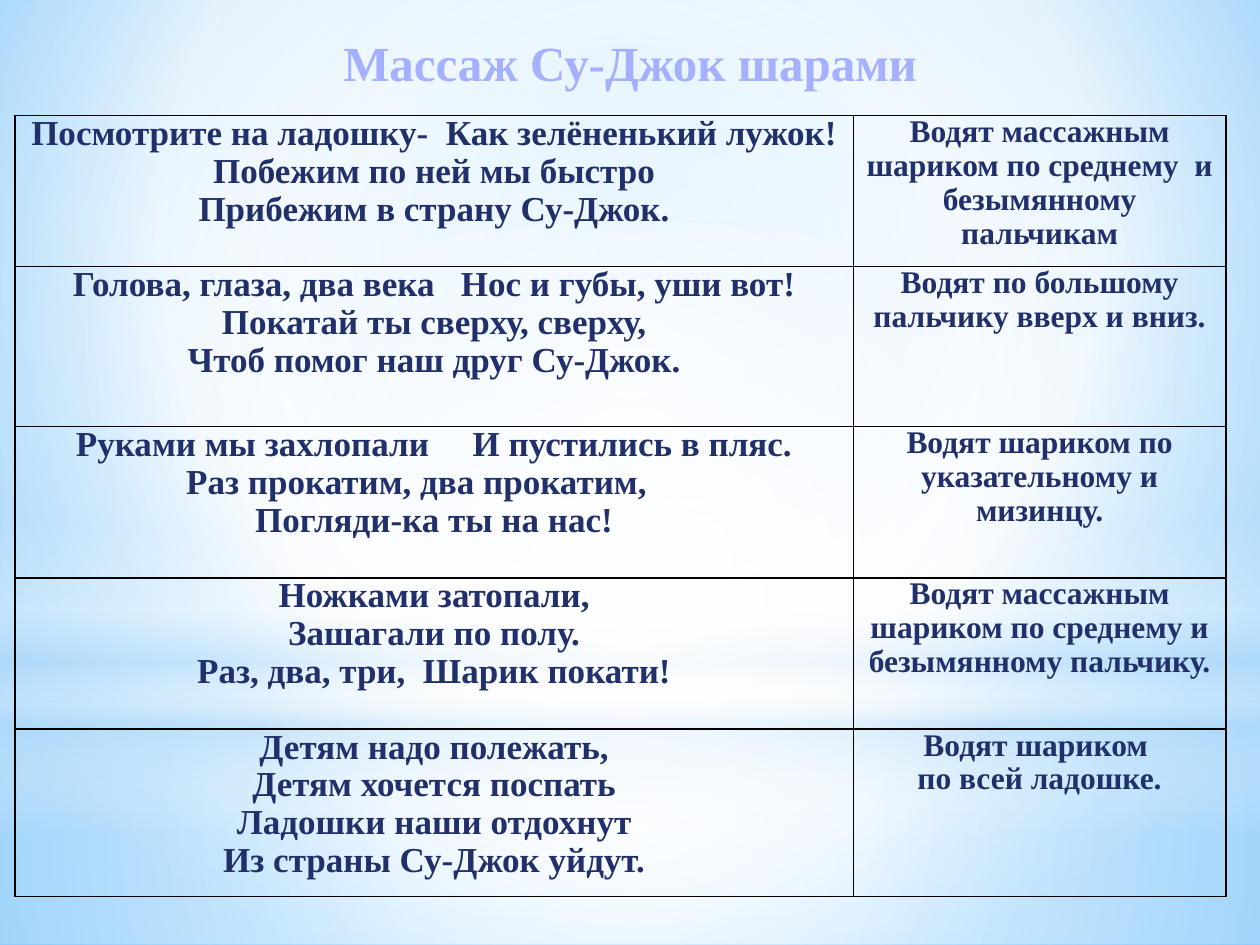
from dataclasses import dataclass

from lxml import etree
from pptx import Presentation
from pptx import util as u
from pptx.dml.color import RGBColor
from pptx.enum import shapes, text
from pptx.oxml import ns


@dataclass(frozen=True)
class Theme:
    """Colours, font and type sizes of the deck."""
    font: str = "Times New Roman"
    title: str = "A5B0FF"
    ink: str = "21306A"
    rule: str = "000000"
    white: str = "FFFFFF"
    mist: str = "B4DCFA"
    sky: str = "9ED5FF"
    deep: str = "5BB9FF"
    title_size: int = 28
    verse_size: int = 20
    action_size: int = 18


THEME = Theme()
CENTRE = (50, 50, 50, 50)
ROWS = [
    (["Посмотрите на ладошку-  Как зелёненький лужок!",
      "Побежим по ней мы быстро",
      "Прибежим в страну Су-Джок."],
     ["Водят массажным шариком по среднему  и безымянному пальчикам"]),
    (["Голова, глаза, два века   Нос и губы, уши вот!",
      "Покатай ты сверху, сверху,",
      "Чтоб помог наш друг Су-Джок."],
     ["Водят по большому пальчику вверх и вниз."]),
    (["Руками мы захлопали     И пустились в пляс.",
      "Раз прокатим, два прокатим,    ",
      "Погляди-ка ты на нас!"],
     ["Водят шариком по указательному и мизинцу."]),
    (["Ножками затопали,",
      "Зашагали по полу.",
      "Раз, два, три,  Шарик покати!"],
     ["Водят массажным шариком по среднему и безымянному пальчику."]),
    (["Детям надо полежать,",
      "Детям хочется поспать",
      "Ладошки наши отдохнут",
      "Из страны Су-Джок уйдут."],
     ["Водят шариком ",
      "по всей ладошке."]),
]


def add_node(parent, tag, **values):
    """Append a DrawingML element with the given attributes."""
    node = etree.SubElement(parent, ns.qn(tag))
    for name, value in values.items():
        node.set(name, str(value))
    return node


def set_gradient(properties, stops, focus=None):
    """Swap a solid fill for a circular gradient, or a vertical one without focus."""
    solid = properties.find(ns.qn("a:solidFill"))
    fill = etree.Element(ns.qn("a:gradFill"), rotWithShape="1")
    stop_list = add_node(fill, "a:gsLst")
    for position, colour, opacity in stops:
        stop = add_node(stop_list, "a:gs", pos=position * 1000)
        shade = add_node(stop, "a:srgbClr", val=colour)
        if opacity < 100:
            add_node(shade, "a:alpha", val=opacity * 1000)
    if focus:
        circle = add_node(fill, "a:path", path="circle")
        edges = {side: edge * 1000 for side, edge in zip("ltrb", focus)}
        add_node(circle, "a:fillToRect", **edges)
    else:
        add_node(fill, "a:lin", ang=90 * 60000, scaled=0)
    properties.replace(solid, fill)


def write_lines(frame, lines, size, colour, spacing):
    """Fill a text frame with centred bold paragraphs."""
    for index, line in enumerate(lines):
        para = frame.paragraphs[0] if index == 0 else frame.add_paragraph()
        para.alignment = text.PP_ALIGN.CENTER
        para.line_spacing = spacing
        span = para.add_run()
        span.text = line
        look = {"name": THEME.font, "size": u.Pt(size), "bold": True}
        for name, value in look.items():
            setattr(span.font, name, value)
        span.font.color.rgb = RGBColor.from_string(colour)


def add_glow(page, kind, box, stops, focus=None):
    """Place one translucent gradient shape in the box."""
    glow = page.shapes.add_shape(kind, *map(u.Pt, box))
    glow.shadow.inherit = False
    glow.line.fill.background()
    glow.fill.solid()
    set_gradient(glow._element.spPr, stops, focus)


def add_backdrop(page, box):
    """Paint the sky background and its layers of light."""
    left, top, width, height = box
    white, mist = THEME.white, THEME.mist
    page.background.fill.solid()
    set_gradient(page._element.find(".//" + ns.qn("p:bgPr")),
                 [(0, THEME.sky, 100), (60, white, 100), (100, THEME.deep, 100)],
                 (20, 10, 20, 60))
    rectangle, oval = shapes.MSO_SHAPE.RECTANGLE, shapes.MSO_SHAPE.OVAL
    horizon = 402
    add_glow(page, rectangle, (left, top + horizon, width, height - horizon),
             [(0, white, 91), (37, white, 76), (100, mist, 79)], CENTRE)
    add_glow(page, rectangle, (left, top, width, horizon),
             [(0, white, 89), (48, white, 62), (100, mist, 79)], CENTRE)
    add_glow(page, rectangle, (left, top + 297, width, 180),
             [(0, white, 0), (29, white, 30), (45, mist, 40),
              (55, white, 26), (65, mist, 60), (100, white, 0)])
    add_glow(page, oval, (left, top + 126, width, horizon),
             [(0, white, 100), (56, white, 0)], CENTRE)


def add_title(page, box):
    """Place the slide title in the box."""
    frame = page.shapes.add_textbox(*map(u.Pt, box)).text_frame
    frame.word_wrap = True
    write_lines(frame, ["Массаж Су-Джок шарами"], THEME.title_size, THEME.title, 1.0)


def add_borders(cell):
    """Draw a thin rule on all four sides of a cell."""
    properties = cell._tc.get_or_add_tcPr()
    for index, side in enumerate("LRTB"):
        rule = add_node(properties, "a:ln" + side, w=u.Pt(1))
        add_node(add_node(rule, "a:solidFill"), "a:srgbClr", val=THEME.rule)
        properties.insert(index, rule)


def add_verses(page, box):
    """Place the table of verses and matching ball movements in the box."""
    left, top, width, height = box
    table = page.shapes.add_table(len(ROWS), 2, *map(u.Pt, box)).table
    table.first_row = table.horz_banding = False
    verse_width = 479
    for column, span in zip(table.columns, (verse_width, width - verse_width)):
        column.width = u.Pt(span)
    row_heights = [86.4, 91.4, 86.4, 86.4]
    row_heights.append(height - sum(row_heights))
    margins = {"margin_left": 5, "margin_right": 5, "margin_top": 0, "margin_bottom": 0}
    sizes = (THEME.verse_size, THEME.action_size)
    for row, row_height, contents in zip(table.rows, row_heights, ROWS):
        row.height = u.Pt(row_height)
        for cell, lines, size in zip(row.cells, contents, sizes):
            for name, value in margins.items():
                setattr(cell, name, u.Pt(value))
            cell.fill.background()
            add_borders(cell)
            write_lines(cell.text_frame, lines, size, THEME.ink, 0.97)


def main():
    """Build and save the deck."""
    deck = Presentation()
    deck.slide_width, deck.slide_height = u.Pt(720), u.Pt(540)
    page = deck.slides.add_slide(deck.slide_layouts[6])
    add_backdrop(page, (0, 0, 720, 540))
    add_title(page, (20, 15, 680, 80))
    add_verses(page, (8.6, 66, 692, 446.4))
    deck.save("out.pptx")


if __name__ == "__main__":
    main()
